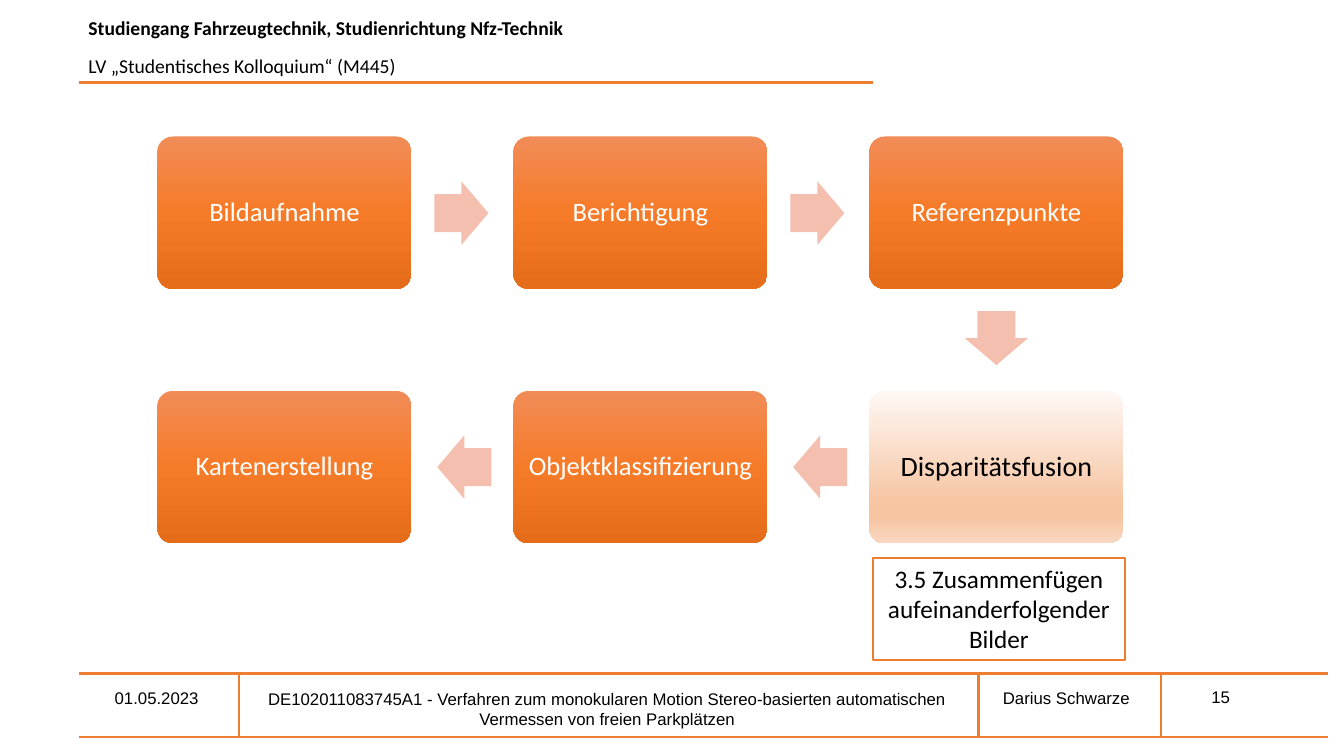
from lxml import etree
from pptx import Presentation
from pptx.dml.color import RGBColor
from pptx.enum import shapes, text
from pptx.oxml.ns import qn
from pptx.util import Cm, Pt

ORANGE = "ED7D31"
STRONG = [(0, "F18C57"), (50, "F67B28"), (100, "E56C19")]
PALE = [(0, "FEF8F5"), (74, "F7C5A2"), (83, "F7C5A2"), (100, "FAD8C1")]


def color(value):
    return RGBColor.from_string(value)


def write(shape, lines, size, font, ink="000000", align=text.PP_ALIGN.CENTER,
          anchor=text.MSO_ANCHOR.TOP):
    frame = shape.text_frame
    frame.word_wrap = True
    frame.vertical_anchor = anchor
    frame.text = "\n".join(lines)
    for paragraph in frame.paragraphs:
        paragraph.alignment = align
        paragraph.font.size = Pt(size)
        paragraph.font.name = font
        paragraph.font.color.rgb = color(ink)
    return frame


presentation = Presentation()
presentation.slide_width = Cm(33.87)
presentation.slide_height = Cm(19.05)
slide = presentation.slides.add_slide(presentation.slide_layouts[6])

# Header
header = slide.shapes.add_textbox(Cm(1.98), Cm(0.28), Cm(22.86), Cm(1.3))
course, lecture = write(
    header,
    ["Studiengang Fahrzeugtechnik, Studienrichtung Nfz-Technik",
     "LV „Studentisches Kolloquium“ (M445)"],
    14, "Calibri", align=text.PP_ALIGN.LEFT).paragraphs
course.font.bold = True
lecture.space_before = Pt(10)

# Footer texts
LEFT, CENTER = text.PP_ALIGN.LEFT, text.PP_ALIGN.CENTER
for label, left, top, width, height, align in [
    ("01.05.2023", 2.64, 17.2, 3.4, 0.77, LEFT),
    ("DE102011083745A1 - Verfahren zum monokularen Motion Stereo-basierten "
     "automatischen Vermessen von freien Parkplätzen", 5.92, 17.22, 18.77, 1.3, CENTER),
    ("Darius Schwarze", 24.21, 17.2, 5.33, 0.77, CENTER),
    ("15", 30.28, 17.17, 2.36, 0.77, LEFT),
]:
    footer = slide.shapes.add_textbox(Cm(left), Cm(top), Cm(width), Cm(height))
    write(footer, [label], 12, "Arial", align=align)

# Rules of header and footer
for x1, y1, x2, y2 in [
    (1.98, 2.08, 22, 2.08),
    (1.98, 16.97, 33.48, 16.97),
    (1.98, 18.57, 33.48, 18.57),
    (6.02, 16.97, 6.02, 18.57),
    (24.66, 16.97, 24.66, 18.57),
    (29.26, 16.97, 29.26, 18.57),
]:
    rule = slide.shapes.add_connector(
        shapes.MSO_CONNECTOR.STRAIGHT, Cm(x1), Cm(y1), Cm(x2), Cm(y2))
    rule.line.color.rgb = color(ORANGE)
    rule.line.width = Pt(1.5)
    etree.SubElement(rule._element.spPr, qn("a:effectLst"))

# Process steps: first row left to right, second row below it
first_left, column_step = 3.97, 8.97
first_top, row_step = 3.44, 6.41
for row, names in enumerate([
    ["Bildaufnahme", "Berichtigung", "Referenzpunkte"],
    ["Kartenerstellung", "Objektklassifizierung", "Disparitätsfusion"],
]):
    for column, name in enumerate(names):
        current = name == "Disparitätsfusion"
        step = slide.shapes.add_shape(
            shapes.MSO_SHAPE.ROUNDED_RECTANGLE,
            Cm(first_left + column * column_step), Cm(first_top + row * row_step),
            Cm(6.4), Cm(3.84))
        step.shadow.inherit = False
        step.adjustments[0] = 0.1
        step.line.fill.background()
        step.fill.gradient()
        step.fill.gradient_angle = 270
        stops = step._element.spPr.find(qn("a:gradFill")).find(qn("a:gsLst"))
        for stop in list(stops):
            stops.remove(stop)
        for position, tone in PALE if current else STRONG:
            stop = etree.SubElement(stops, qn("a:gs"), pos=str(position * 1000))
            etree.SubElement(stop, qn("a:srgbClr"), val=tone)
        frame = write(step, [name], 20 if current else 19, "Calibri",
                      "000000" if current else "FFFFFF", anchor=text.MSO_ANCHOR.MIDDLE)
        frame.margin_left = frame.margin_right = Cm(0.2)
        frame.margin_top = frame.margin_bottom = Cm(0.2)
        frame.paragraphs[0].line_spacing = 0.9

# Arrows between the steps
for left, top, rotation in [
    (10.95, 4.57, 0), (19.92, 4.57, 0), (24.43, 7.72, 90),
    (19.99, 10.97, 180), (11.02, 10.97, 180),
]:
    arrow = slide.shapes.add_shape(
        shapes.MSO_SHAPE.RIGHT_ARROW, Cm(left), Cm(top), Cm(1.36), Cm(1.6))
    arrow.shadow.inherit = False
    arrow.adjustments[0] = 0.6
    arrow.adjustments[1] = 0.5
    arrow.rotation = rotation
    arrow.fill.solid()
    arrow.fill.fore_color.rgb = color("F4BFAE")
    arrow.line.fill.background()

# Note under the current step
note = slide.shapes.add_shape(
    shapes.MSO_SHAPE.RECTANGLE, Cm(22), Cm(14.07), Cm(6.35), Cm(2.57))
note.shadow.inherit = False
note.fill.solid()
note.fill.fore_color.rgb = color("FFFFFF")
note.line.color.rgb = color(ORANGE)
note.line.width = Pt(1.5)
write(note, ["3.5 Zusammenfügen aufeinanderfolgender Bilder"], 18, "Calibri")

presentation.save("out.pptx")
